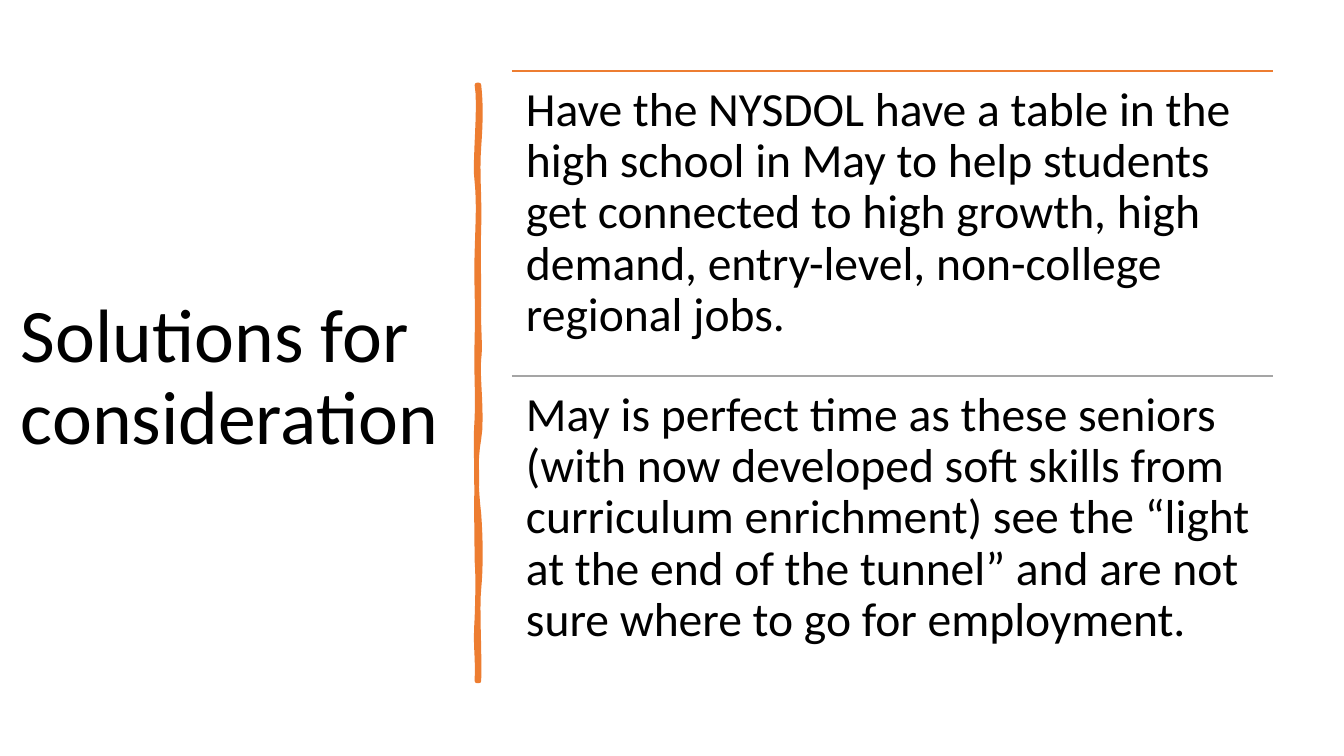
import dataclasses

import lxml.etree
import pptx
import pptx.dml.color
import pptx.enum.shapes
import pptx.enum.text
import pptx.oxml.ns
import pptx.shapes.connector
import pptx.shapes.freeform
import pptx.slide
import pptx.util

SLIDE_WIDTH, SLIDE_HEIGHT = 1344, 756
EMU_PER_PX = 12192000 / SLIDE_WIDTH
COLORS = {"text": "000000", "orange": "ED7D31", "gray": "A5A5A5"}
FONT = "Calibri"
SOLUTION_LEFT, SOLUTION_TOP = 512, 71
SOLUTION_WIDTH, SOLUTION_HEIGHT = 761, 305
STROKE_TOP, STROKE_BOTTOM = 85, 681
STROKE_LEFT, STROKE_RIGHT = 477, 479
CURVE_STEPS = 8


@dataclasses.dataclass(frozen=True)
class TextBlock:
    text: str
    left: int
    top: int
    width: int
    height: int
    size: int
    inset_x: int
    inset_y: int
    anchor: pptx.enum.text.MSO_ANCHOR


@dataclasses.dataclass(frozen=True)
class Solution:
    text: str
    rule_color: str


@dataclasses.dataclass(frozen=True)
class Wave:
    first_bow: int
    first_y: int
    second_bow: int
    second_y: int
    end_y: int


TITLE = TextBlock(
    "Solutions for consideration", 11, 71, 457, 616, 54, 10, 5,
    pptx.enum.text.MSO_ANCHOR.MIDDLE,
)
SOLUTIONS = [
    Solution(
        "Have the NYSDOL have a table in the high school in May to help students "
        "get connected to high growth, high demand, entry-level, non-college "
        "regional jobs.",
        "orange",
    ),
    Solution(
        "May is perfect time as these seniors (with now developed soft skills from "
        "curriculum enrichment) see the “light at the end of the tunnel” and are "
        "not sure where to go for employment.",
        "gray",
    ),
]
RIGHT_WAVES = [
    Wave(2, 103, 2, 120, 147),
    Wave(-2, 174, 1, 197, 228),
    Wave(-1, 259, 0, 264, 296),
    Wave(-1, 328, 2, 345, 359),
    Wave(-2, 373, 4, 417, 439),
    Wave(-4, 461, -3, 488, 514),
    Wave(2, 540, 2, 569, 589),
    Wave(-2, 608, 1, 655, STROKE_BOTTOM),
]
LEFT_WAVES = [
    Wave(1, 651, -2, 649, 618),
    Wave(1, 588, 1, 575, 561),
    Wave(0, 548, -1, 499, 481),
    Wave(0, 463, -2, 449, 418),
    Wave(1, 389, -1, 376, 338),
    Wave(1, 300, -1, 283, 252),
    Wave(1, 220, 2, 202, 182),
    Wave(-3, 164, 4, 105, STROKE_TOP),
]


def px(length: float) -> pptx.util.Emu:
    return pptx.util.Emu(round(length * EMU_PER_PX))


def color(name: str) -> pptx.dml.color.RGBColor:
    return pptx.dml.color.RGBColor.from_string(COLORS[name])


def add_text(slide: pptx.slide.Slide, block: TextBlock) -> None:
    shape = slide.shapes.add_textbox(
        px(block.left), px(block.top), px(block.width), px(block.height)
    )
    frame = shape.text_frame
    frame.word_wrap = True
    frame.vertical_anchor = block.anchor
    frame.margin_left = frame.margin_right = px(block.inset_x)
    frame.margin_top = frame.margin_bottom = px(block.inset_y)
    frame.text = block.text
    paragraph = frame.paragraphs[0]
    paragraph.line_spacing = 0.9
    font = paragraph.runs[0].font
    font.name = FONT
    font.size = pptx.util.Pt(block.size)
    font.color.rgb = color("text")


def add_rule(
    slide: pptx.slide.Slide, top: int, color_name: str
) -> pptx.shapes.connector.Connector:
    rule = slide.shapes.add_connector(
        pptx.enum.shapes.MSO_CONNECTOR.STRAIGHT,
        px(SOLUTION_LEFT), px(top), px(SOLUTION_LEFT + SOLUTION_WIDTH), px(top),
    )
    rule.line.color.rgb = color(color_name)
    rule.line.width = pptx.util.Pt(1)
    lxml.etree.SubElement(
        rule._element.spPr, pptx.oxml.ns.qn("a:effectLst")
    )
    return rule


def edge_points(x: int, start_y: int, waves: list[Wave]) -> list[tuple[int, int]]:
    points = [(px(x), px(start_y))]
    for wave in waves:
        for step in range(1, CURVE_STEPS + 1):
            t = step / CURVE_STEPS
            first, second = 3 * t * (1 - t) ** 2, 3 * t**2 * (1 - t)
            bow = first * wave.first_bow + second * wave.second_bow
            y = (
                (1 - t) ** 3 * start_y
                + first * wave.first_y
                + second * wave.second_y
                + t**3 * wave.end_y
            )
            points.append((px(x + bow), px(y)))
        start_y = wave.end_y
    return points


def add_brush_stroke(slide: pptx.slide.Slide) -> None:
    points = edge_points(STROKE_RIGHT, STROKE_TOP, RIGHT_WAVES)
    points += edge_points(STROKE_LEFT, STROKE_BOTTOM, LEFT_WAVES)
    builder = slide.shapes.build_freeform(*points[0])
    builder.add_line_segments(points[1:], close=True)
    shape = builder.convert_to_shape()
    shape.shadow.inherit = False
    shape.fill.solid()
    shape.fill.fore_color.rgb = color("orange")
    shape.line.color.rgb = color("orange")
    shape.line.width = pptx.util.Pt(3.25)
    outline = shape._element.spPr.find(pptx.oxml.ns.qn("a:ln"))
    lxml.etree.SubElement(outline, pptx.oxml.ns.qn("a:round"))


def main() -> None:
    presentation = pptx.Presentation()
    presentation.slide_width = px(SLIDE_WIDTH)
    presentation.slide_height = px(SLIDE_HEIGHT)
    slide = presentation.slides.add_slide(presentation.slide_layouts[6])
    add_text(slide, TITLE)
    add_brush_stroke(slide)
    for index, solution in enumerate(SOLUTIONS):
        top = SOLUTION_TOP + index * SOLUTION_HEIGHT
        add_rule(slide, top, solution.rule_color)
        add_text(slide, TextBlock(
            solution.text, SOLUTION_LEFT, top, SOLUTION_WIDTH, SOLUTION_HEIGHT,
            34, 14, 14, pptx.enum.text.MSO_ANCHOR.TOP,
        ))
    presentation.save("out.pptx")


if __name__ == "__main__":
    main()
